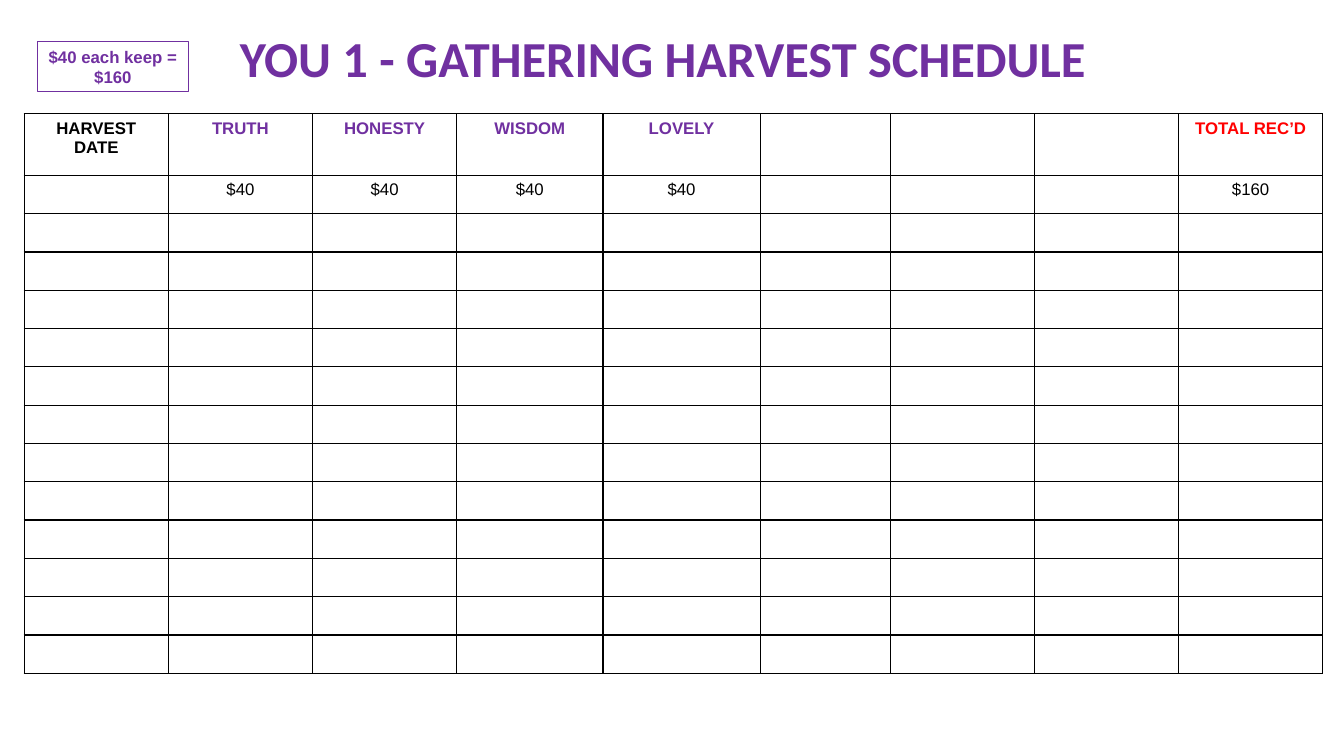
from dataclasses import dataclass

from lxml.etree import SubElement as Sub
from pptx import Presentation
from pptx.dml.color import RGBColor as Color
from pptx.enum.shapes import MSO_SHAPE as Shape
from pptx.enum.text import MSO_ANCHOR as Anchor, PP_ALIGN as Align
from pptx.oxml.ns import qn
from pptx.util import Inches, Pt


@dataclass(frozen=True)
class Theme:
    ink: str = "000000"
    plum: str = "7030A0"
    red: str = "FF0000"
    head: str = "Calibri"
    body: str = "Arial"
    large: int = 36
    small: int = 12
    grid: float = 1
    edge: float = 0.75


def write(frame, text, *, font, size, color, bold=False):
    para = frame.paragraphs[0]
    para.alignment = Align.CENTER
    if not text:
        Sub(para._p, qn("a:endParaRPr"), sz=str(size * 100))
        return
    run = para.add_run()
    run.text = text
    run.font.name = font
    run.font.size = Pt(size)
    run.font.bold = bold
    run.font.color.rgb = Color.from_string(color)


class Sheet:
    def __init__(self, deck, theme):
        self.theme = theme
        self.slide = deck.slides.add_slide(deck.slide_layouts[5])

    def title(self, text, left, top, width, height):
        box = self.slide.shapes.title
        box.left, box.top = Inches(left), Inches(top)
        box.width, box.height = Inches(width), Inches(height)
        box.text_frame.vertical_anchor = Anchor.MIDDLE
        write(box.text_frame, text, font=self.theme.head,
              size=self.theme.large, color=self.theme.plum, bold=True)

    def note(self, text, left, top, width, height):
        box = self.slide.shapes.add_shape(
            Shape.RECTANGLE, Inches(left), Inches(top), Inches(width), Inches(height))
        box.shadow.inherit = False
        box.fill.background()
        box.line.color.rgb = Color.from_string(self.theme.plum)
        box.line.width = Pt(self.theme.edge)
        frame = box.text_frame
        frame.word_wrap = True
        frame.vertical_anchor = Anchor.MIDDLE
        frame.margin_left = frame.margin_right = Inches(0.05)
        write(frame, text, font=self.theme.body, size=self.theme.small,
              color=self.theme.plum, bold=True)

    def border(self, cell):
        props = cell._tc.get_or_add_tcPr()
        for spot, side in enumerate(("L", "R", "T", "B")):
            line = props.makeelement(qn(f"a:ln{side}"), {"w": str(Pt(self.theme.grid))})
            fill = Sub(line, qn("a:solidFill"))
            Sub(fill, qn("a:srgbClr"), val=self.theme.ink)
            props.insert(spot, line)

    def table(self, rows, tints, left, top, widths, heights):
        grid = self.slide.shapes.add_table(
            len(heights), len(widths), Inches(left), Inches(top),
            Inches(sum(widths)), Inches(sum(heights))).table
        grid.first_row = grid.horz_banding = False
        for col, width in zip(grid.columns, widths):
            col.width = Inches(width)
        for r, (row, height) in enumerate(zip(grid.rows, heights)):
            row.height = Inches(height)
            for c, cell in enumerate(row.cells):
                cell.fill.background()
                self.border(cell)
                text = rows[r][c] if r < len(rows) else ""
                write(cell.text_frame, text, font=self.theme.body,
                      size=self.theme.small, bold=r == 0,
                      color=tints[c] if r == 0 else self.theme.ink)


def main():
    deck = Presentation()
    deck.slide_width, deck.slide_height = Inches(13.33), Inches(7.5)
    theme = Theme()
    sheet = Sheet(deck, theme)
    names = ["TRUTH", "HONESTY", "WISDOM", "LOVELY"]
    blanks = [""] * 3
    rows = [
        ["HARVEST DATE", *names, *blanks, "TOTAL REC’D"],
        ["", *["$40"] * len(names), *blanks, "$160"],
    ]
    tints = [theme.ink, *[theme.plum] * 7, theme.red]
    widths = [1.43, 1.43, 1.43, 1.45, 1.56, 1.29, 1.43, 1.43, 1.43]
    sheet.table(rows, tints, 0.24, 1.13, widths, [0.61] + [0.38] * 13)
    sheet.title("YOU 1 - GATHERING HARVEST SCHEDULE", 1.99, 0.21, 9.17, 0.71)
    sheet.note("$40 each keep = $160", 0.37, 0.41, 1.5, 0.5)
    deck.save("out.pptx")


if __name__ == "__main__":
    main()
